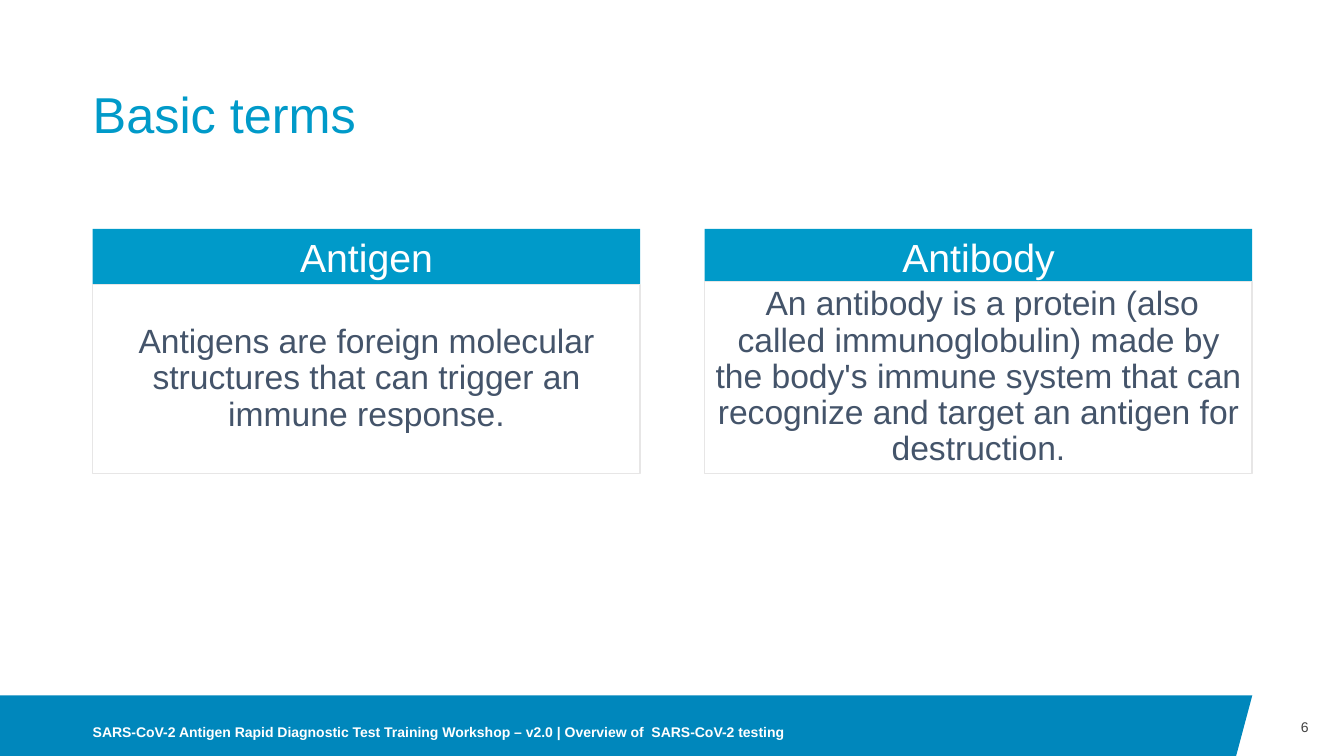
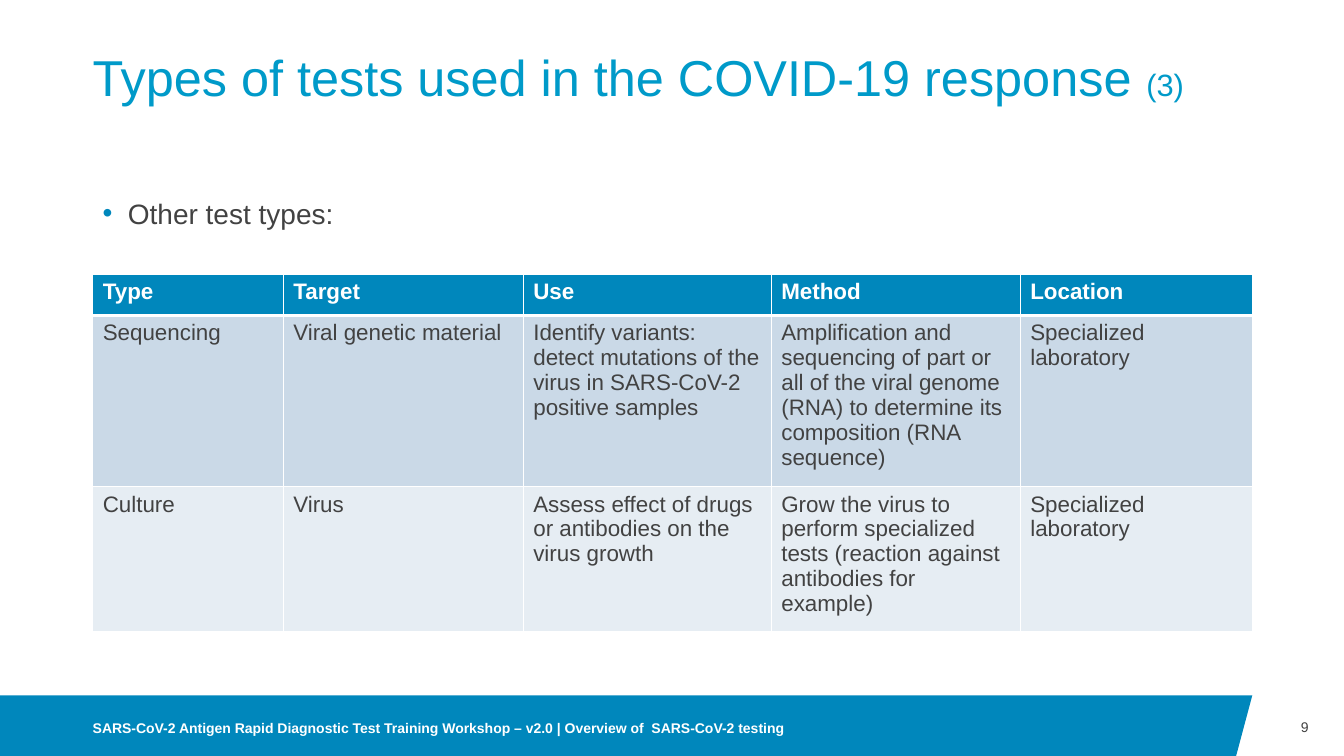
from dataclasses import dataclass
from lxml.etree import SubElement as Sub
from pptx import Presentation
from pptx.dml.color import RGBColor as Rgb
from pptx.enum.shapes import MSO_SHAPE as Shape
from pptx.enum.text import MSO_ANCHOR as Anchor, PP_ALIGN as Align
from pptx.oxml.ns import qn
from pptx.util import Inches, Pt


@dataclass(frozen=True)
class Theme:
    font: str = "Arial"
    band: str = "0087BC"
    title: str = "009AC9"
    ink: str = "424242"
    slate: str = "44546A"
    edge: str = "E7E6E6"
    white: str = "FFFFFF"
    rows: tuple = ("CAD9E7", "E6EDF3")
    big: int = 36
    head: int = 28
    body: int = 24
    count: int = 22
    item: int = 20
    cell: int = 16
    foot: int = 10


T = Theme()
LEFT, WIDE = 0.92, 11.5
RIGHT = LEFT + WIDE
BAND = [(0, 6.9), (RIGHT, 6.9), (12.26, 7.5), (0, 7.5)]
FOOTER = "SARS-CoV-2 Antigen Rapid Diagnostic Test Training Workshop – v2.0 | Overview of  SARS-CoV-2 testing"

TERMS = dict(title="Basic terms", count="", top=0.4, page="6", foot=6.99)
TESTS = dict(title="Types of tests used in the COVID-19 response ", count="(3)",
             top=0.04, page="9", foot=6.95)

CARDS = [
    ("Antigen", 2.82,
     "Antigens are foreign molecular structures that can trigger an immune response."),
    ("Antibody", 2.79,
     " An antibody is a protein (also called immunoglobulin) made by the body's "
     "immune system that can recognize and target an antigen for destruction."),
]
BULLET = "Other test types:"
COLS = [1.89, 2.38, 2.46, 2.47, 2.3]
ROWS = [0.41, 1.57, 1.34]
CELLS = [
    ["Type", "Target", "Use", "Method", "Location"],
    ["Sequencing", "Viral genetic material",
     "Identify variants: detect mutations of the virus in SARS-CoV-2 positive samples",
     "Amplification and sequencing of part or all of the viral genome (RNA) "
     "to determine its composition (RNA sequence)",
     "Specialized laboratory"],
    ["Culture", "Virus",
     "Assess effect of drugs or antibodies on the virus growth",
     "Grow the virus to perform specialized tests (reaction against antibodies for example)",
     "Specialized laboratory"],
]


def paint(item, color):
    item.fill.solid()
    item.fill.fore_color.rgb = Rgb.from_string(color)


def write(frame, text, size, color, bold=False, align=Align.LEFT,
          anchor=Anchor.MIDDLE, space=1.0, inset=None, tail="", small=None):
    frame.word_wrap = True
    if anchor is not None:
        frame.vertical_anchor = anchor
    if inset is not None:
        frame.margin_left = frame.margin_right = Inches(inset)
        frame.margin_top = frame.margin_bottom = Inches(inset)
    para = frame.paragraphs[0]
    para.alignment, para.line_spacing = align, space
    for words, points in ((text, size), (tail, small)):
        if words:
            run = para.add_run()
            run.text = words
            font = run.font
            font.name, font.size, font.bold = T.font, Pt(points), bold
            font.color.rgb = Rgb.from_string(color)
    return para


def label(slide, text, box, size, color, inset=0, **form):
    frame = slide.shapes.add_textbox(*map(Inches, box)).text_frame
    return write(frame, text, size, color, inset=inset, **form)


def panel(slide, text, box, size, color, fill, line=None, **form):
    rect = slide.shapes.add_shape(Shape.RECTANGLE, *map(Inches, box))
    rect.shadow.inherit = False
    paint(rect, fill)
    if line:
        rect.line.color.rgb = Rgb.from_string(line)
        rect.line.width = Pt(1)
    else:
        rect.line.fill.background()
    write(rect.text_frame, text, size, color, align=Align.CENTER, inset=0.1, **form)


def start(deck, title, count, top, page, foot):
    slide = deck.slides.add_slide(deck.slide_layouts[6])
    points = [(Inches(x), Inches(y)) for x, y in BAND]
    pen = slide.shapes.build_freeform(*points[0])
    pen.add_line_segments(points[1:], close=True)
    band = pen.convert_to_shape()
    band.shadow.inherit = False
    paint(band, T.band)
    band.line.fill.background()
    label(slide, title, (LEFT, top, WIDE, 1.03), T.big, T.title,
          anchor=Anchor.BOTTOM, space=0.9, tail=count, small=T.count)
    label(slide, page, (RIGHT, 6.9, 0.56, 0.63), T.foot, T.ink, align=Align.RIGHT)
    label(slide, FOOTER, (LEFT, foot, 8, 0.55), T.foot, T.white, bold=True)
    return slide


def rule(cell, above, below):
    props = cell._tc.get_or_add_tcPr()
    for side, width in (("L", 1), ("R", 1), ("T", above), ("B", below)):
        line = Sub(props, qn(f"a:ln{side}"), w=str(Pt(width)))
        Sub(Sub(line, qn("a:solidFill")), qn("a:srgbClr"), val=T.white)


def dot(para):
    props = para._p.get_or_add_pPr()
    props.set("marL", str(Inches(0.25)))
    props.set("indent", str(-Inches(0.25)))
    Sub(Sub(props, qn("a:buClr")), qn("a:srgbClr"), val=T.band)
    Sub(props, qn("a:buFont"), typeface=T.font)
    Sub(props, qn("a:buChar"), char="•")


def terms(deck):
    slide = start(deck, **TERMS)
    width, top, base = 5.43, 2.27, 4.7
    step = WIDE - width
    for i, (name, split, text) in enumerate(CARDS):
        x = LEFT + i * step
        panel(slide, name, (x, top, width, 0.55), T.head, T.white, T.title)
        panel(slide, text, (x, split, width, base - split), T.body, T.slate,
              T.white, line=T.edge, space=0.9)


def tests(deck):
    slide = start(deck, **TESTS)
    dot(label(slide, BULLET, (LEFT, 1.9, WIDE, 0.5), T.item, T.ink,
              anchor=Anchor.TOP, inset=0.1))
    slide.shapes[-1].text_frame.margin_top = Inches(0.05)
    box = map(Inches, (LEFT, 2.72, WIDE, sum(ROWS)))
    grid = slide.shapes.add_table(len(ROWS), len(COLS), *box).table
    for col, width in zip(grid.columns, COLS):
        col.width = Inches(width)
    for r, (row, high) in enumerate(zip(CELLS, ROWS)):
        grid.rows[r].height = Inches(high)
        head = r == 0
        for c, text in enumerate(row):
            cell = grid.cell(r, c)
            rule(cell, 3 if r == 1 else 1, 3 if head else 1)
            paint(cell, T.band if head else T.rows[r - 1])
            write(cell.text_frame, text, T.cell, T.white if head else T.ink,
                  bold=head, anchor=None)


def main():
    deck = Presentation()
    deck.slide_width, deck.slide_height = Inches(13.33), Inches(7.5)
    terms(deck)
    tests(deck)
    deck.save("out.pptx")


if __name__ == "__main__":
    main()
